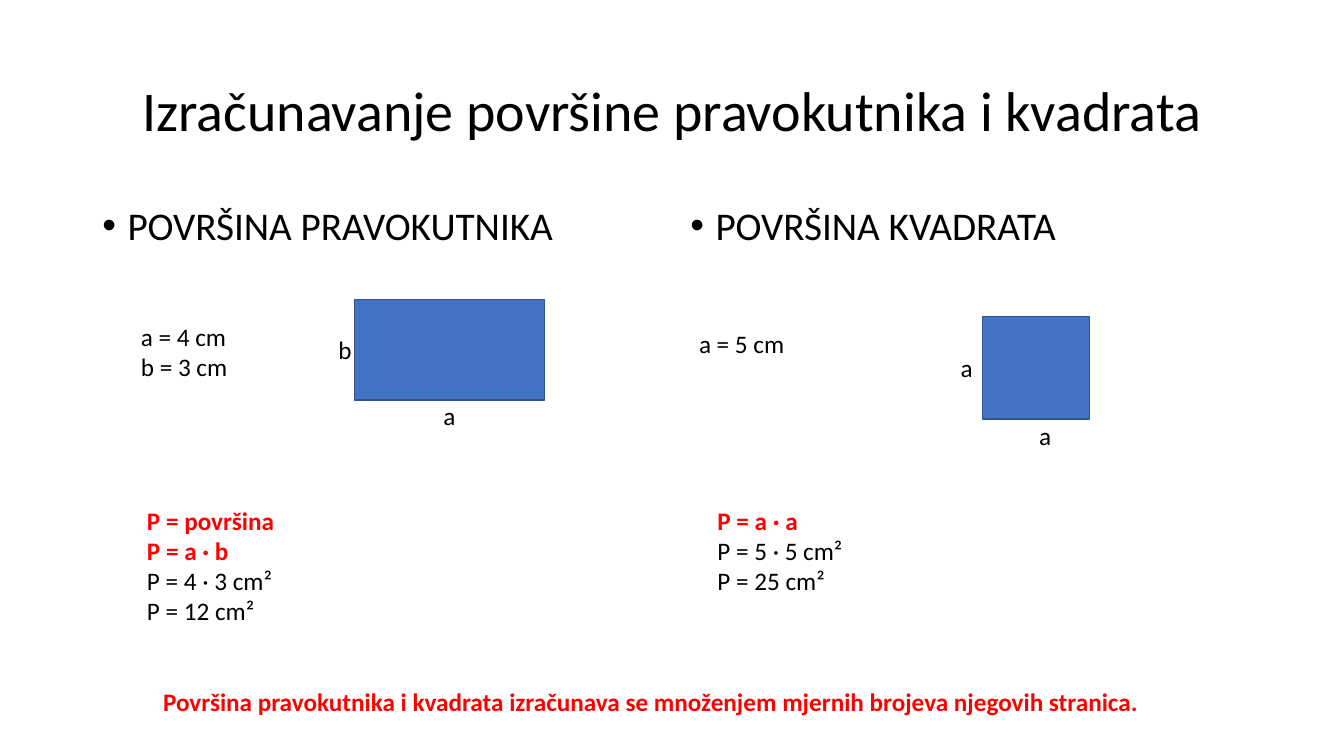
from lxml import etree
from pptx import Presentation
from pptx.dml.color import RGBColor
from pptx.enum import shapes, text
from pptx.oxml import ns
from pptx.util import Pt

HUES = {"ink": "000000", "red": "FF0000", "fill": "4472C4", "edge": "325491"}


class Board:
    """Holds the style and the current slide, and draws each kind of element."""

    def __init__(self, deck, font="Calibri"):
        self.font = font
        self.slide = deck.slides.add_slide(deck.slide_layouts[5])

    def hue(self, name):
        return RGBColor.from_string(HUES[name])

    def style(self, para, size, hue="ink", bold=False):
        para.font.name = self.font
        para.font.size = Pt(size)
        para.font.bold = bold
        para.font.color.rgb = self.hue(hue)

    def title(self, words, x, y, w, h):
        box = self.slide.shapes.title
        box.left, box.top, box.width, box.height = map(Pt, (x, y, w, h))
        frame = box.text_frame
        frame.text = words
        frame.vertical_anchor = text.MSO_ANCHOR.MIDDLE
        para = frame.paragraphs[0]
        para.alignment = text.PP_ALIGN.CENTER
        para.line_spacing = 0.9
        self.style(para, 40)

    def label(self, lines, x, y, w, h=29, size=18, red=0):
        box = self.slide.shapes.add_textbox(*map(Pt, (x, y, w, h)))
        frame = box.text_frame
        frame.word_wrap = False
        for i, line in enumerate(lines):
            para = frame.paragraphs[0] if i == 0 else frame.add_paragraph()
            para.text = line
            hot = i < red
            self.style(para, size, "red" if hot else "ink", hot)
        return frame

    def head(self, words, x):
        frame = self.label([words], x, 144, 408, 40, 28)
        frame.word_wrap = True
        para = frame.paragraphs[0]
        para.line_spacing = 0.9
        props = para._p.get_or_add_pPr()
        props.set("marL", str(Pt(18)))
        props.set("indent", str(-Pt(18)))
        font = etree.SubElement(props, ns.qn("a:buFont"))
        font.set("typeface", "Arial")
        mark = etree.SubElement(props, ns.qn("a:buChar"))
        mark.set("char", "•")

    def rect(self, x, y, w, h):
        kind = shapes.MSO_SHAPE.RECTANGLE
        box = self.slide.shapes.add_shape(kind, *map(Pt, (x, y, w, h)))
        box.shadow.inherit = False
        box.fill.solid()
        box.fill.fore_color.rgb = self.hue("fill")
        box.line.color.rgb = self.hue("edge")
        box.line.width = Pt(1)


def main():
    deck = Presentation()
    deck.slide_width, deck.slide_height = Pt(960), Pt(540)
    board = Board(deck)
    board.title("Izračunavanje površine pravokutnika i kvadrata", 66, 28.8, 828, 104.4)

    board.head("POVRŠINA PRAVOKUTNIKA", 66)
    board.label(["a = 4 cm", "b = 3 cm"], 93.6, 226, 78, 51)
    board.rect(253.4, 213.8, 135.4, 72)
    board.label(["a"], 309.6, 282.2, 23)
    board.label(["b"], 234.7, 235.4, 24.5)
    sums = ["P = površina", "P = a · b", "P = 4 · 3 cm²", "P = 12 cm²"]
    board.label(sums, 97.9, 357.1, 105.8, 94.3, red=2)

    board.head("POVRŠINA KVADRATA", 486)
    board.label(["a = 5 cm"], 492.2, 230.8, 76)
    board.rect(702, 226, 76.4, 73.4)
    board.label(["a"], 679, 248.4, 23)
    board.label(["a"], 735.1, 296.6, 23)
    sums = ["P = a · a", "P = 5 · 5 cm²", "P = 25 cm²"]
    board.label(sums, 505.4, 357.1, 105.1, 72.7, red=1)

    rule = "Površina pravokutnika i kvadrata izračunava se množenjem mjernih brojeva njegovih stranica."
    board.label([rule], 109.4, 486.7, 712, red=1)
    deck.save("out.pptx")


if __name__ == "__main__":
    main()
